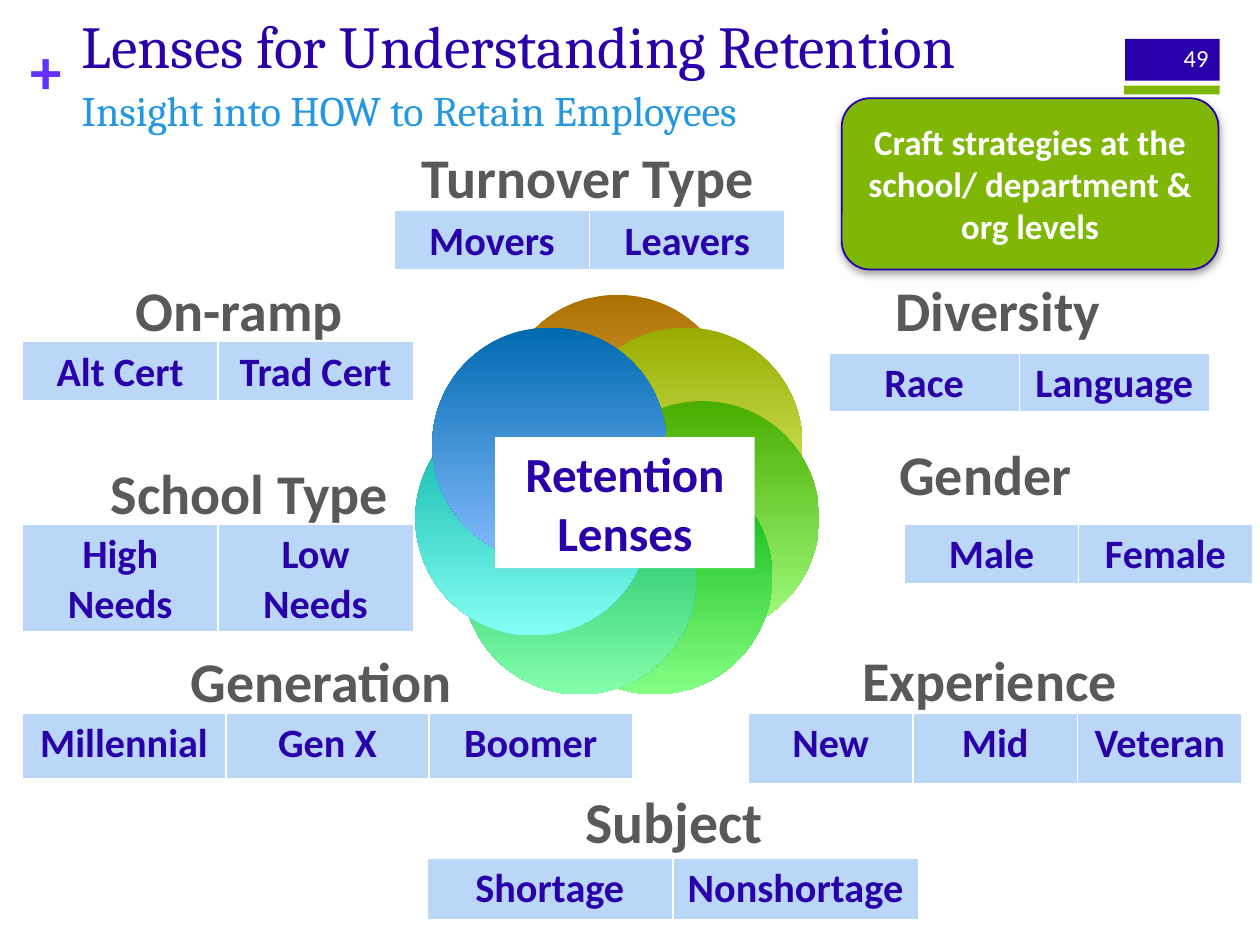
import math
from dataclasses import dataclass
from typing import Optional

import pptx
import pptx.dml.color
import pptx.enum.shapes
import pptx.enum.text
import pptx.oxml
import pptx.oxml.ns
import pptx.util
from lxml import etree

Inches = pptx.util.Inches
Pt = pptx.util.Pt
RGB = pptx.dml.color.RGBColor.from_string
SHAPE = pptx.enum.shapes.MSO_SHAPE
ALIGN = pptx.enum.text.PP_ALIGN
ANCHOR = pptx.enum.text.MSO_ANCHOR
qn = pptx.oxml.ns.qn


@dataclass(frozen=True)
class Theme:
    purple: str = "2900A9"
    violet: str = "6432FF"
    green: str = "80B606"
    sky: str = "2397E2"
    grey: str = "595959"
    pale_blue: str = "BBD7F8"
    white: str = "FFFFFF"
    outline: str = "2800A5"
    shadow: str = "808080"
    heading: str = "Cambria"
    body: str = "Calibri"
    title_size: int = 34
    subtitle_size: int = 24
    plus_size: int = 36
    label_size: int = 32
    subject_size: int = 33
    cell_size: int = 23
    center_size: int = 28
    callout_size: int = 20
    number_size: int = 14


THEME = Theme()


@dataclass(frozen=True)
class Box:
    x: float
    y: float
    w: float
    h: float

    def lengths(self) -> list:
        return [Inches(v) for v in (self.x, self.y, self.w, self.h)]


@dataclass(frozen=True)
class TextStyle:
    size: int
    color: str
    bold: bool = True
    font: str = THEME.body
    align: ALIGN = ALIGN.CENTER
    anchor: ANCHOR = ANCHOR.MIDDLE
    inset: bool = True
    wrap: bool = True
    spacing: Optional[float] = None


@dataclass(frozen=True)
class Lens:
    name: str
    label: Box
    choices: tuple
    table: Box


LABEL = TextStyle(THEME.label_size, THEME.grey, inset=False, spacing=0.9)
SUBJECT = TextStyle(THEME.subject_size, THEME.grey, align=ALIGN.LEFT,
                    anchor=ANCHOR.TOP, wrap=False)
CELL = TextStyle(THEME.cell_size, THEME.purple)

LENSES = [
    Lens("Turnover Type", Box(3.1, 0.9, 3.13, 1.06),
         ("Movers", "Leavers"), Box(3.13, 1.67, 3.1, 0.48)),
    Lens("Diversity", Box(6.91, 1.86, 2.02, 1.26),
         ("Race", "Language"), Box(6.58, 2.8, 3.02, 0.48)),
    Lens("Gender", Box(6.83, 3.12, 1.98, 1.34),
         ("Male", "Female"), Box(7.18, 4.16, 2.76, 0.48)),
    Lens("Experience", Box(6.79, 4.81, 2.13, 1.23),
         ("New", "Mid", "Veteran"), Box(5.94, 5.66, 3.92, 0.57)),
    Lens("Generation", Box(1.13, 4.82, 2.84, 1.23),
         ("Millennial", "Gen X", "Boomer"), Box(0.18, 5.66, 4.84, 0.53)),
    Lens("School Type", Box(0.55, 3.27, 2.86, 1.34),
         ("High Needs", "Low Needs"), Box(0.18, 4.16, 3.1, 0.87)),
    Lens("On-ramp", Box(0.89, 1.86, 2.02, 1.26),
         ("Alt Cert", "Trad Cert"), Box(0.18, 2.71, 3.1, 0.48)),
    Lens("Subject", Box(4.55, 6.19, 1.69, 0.66),
         ("Shortage", "Nonshortage"), Box(3.39, 6.81, 3.9, 0.5)),
]
PETALS = [("AB7100", "FFC384"), ("98AC00", "E9FF84"), ("4AAD00", "A4FF84"),
          ("00AD05", "85FF85"), ("00AE54", "85FFAB"), ("00AFA4", "85FFF3"),
          ("006AAF", "85BCFF")]


def write(tf, text: str, style: TextStyle) -> None:
    p = tf.paragraphs[0]
    p.alignment = style.align
    if style.spacing:
        p.line_spacing = style.spacing
    r = p.add_run()
    r.text = text
    for name, value in {"name": style.font, "size": Pt(style.size),
                        "bold": style.bold}.items():
        setattr(r.font, name, value)
    r.font.color.rgb = RGB(style.color)


def write_in_shape(sp, text: str, style: TextStyle) -> None:
    tf = sp.text_frame
    across, down = (0.1, 0.05) if style.inset else (0, 0)
    for name, value in {"word_wrap": style.wrap, "vertical_anchor": style.anchor,
                        "margin_left": Inches(across), "margin_right": Inches(across),
                        "margin_top": Inches(down), "margin_bottom": Inches(down)}.items():
        setattr(tf, name, value)
    write(tf, text, style)


def add_text(s, box: Box, text: str, style: TextStyle) -> None:
    write_in_shape(s.shapes.add_textbox(*box.lengths()), text, style)


def add_block(s, box: Box, fill: str, kind=SHAPE.RECTANGLE):
    sp = s.shapes.add_shape(kind, *box.lengths())
    sp.shadow.inherit = False
    sp.fill.solid()
    sp.fill.fore_color.rgb = RGB(fill)
    sp.line.fill.background()
    return sp


def add_petals(s, cx: float, cy: float, radius: float, diameter: float) -> None:
    """Overlapping gradient circles, spread evenly clockwise from the top."""
    for i, colors in enumerate(PETALS):
        angle = 2 * math.pi * i / len(PETALS)
        x = cx + radius * math.sin(angle) - diameter / 2
        y = cy - radius * math.cos(angle) - diameter / 2
        sp = add_block(s, Box(x, y, diameter, diameter), colors[0], SHAPE.OVAL)
        sp.fill.gradient()
        sp.fill.gradient_angle = 270
        for stop, color in zip(sp.fill.gradient_stops, colors):
            stop.color.rgb = RGB(color)


def set_borders(cell) -> None:
    tc_pr = cell._tc.get_or_add_tcPr()
    for i, (side, width) in enumerate((("L", 1), ("R", 1), ("T", 1), ("B", 3))):
        ln = etree.Element(qn(f"a:ln{side}"), w=str(Pt(width)))
        fill = etree.SubElement(ln, qn("a:solidFill"))
        etree.SubElement(fill, qn("a:srgbClr"), val=THEME.white)
        tc_pr.insert(i, ln)


def add_choices(s, box: Box, choices: tuple) -> None:
    table = s.shapes.add_table(1, len(choices), *box.lengths()).table
    table.first_row = table.horz_banding = False
    for i, choice in enumerate(choices):
        table.columns[i].width = Inches(box.w / len(choices))
        cell = table.cell(0, i)
        cell.fill.solid()
        cell.fill.fore_color.rgb = RGB(THEME.pale_blue)
        set_borders(cell)
        write(cell.text_frame, choice, CELL)


def add_callout(s, box: Box, text: str) -> None:
    sp = add_block(s, box, THEME.green, SHAPE.ROUNDED_RECTANGLE)
    sp.line.color.rgb = RGB(THEME.outline)
    sp.line.width = Pt(1)
    effects = sp._element.spPr.find(qn("a:effectLst"))
    shadow = etree.SubElement(effects, qn("a:outerShdw"), blurRad=str(Pt(5)),
                              dist=str(Pt(2)), dir="5400000", rotWithShape="0")
    color = etree.SubElement(shadow, qn("a:srgbClr"), val=THEME.shadow)
    etree.SubElement(color, qn("a:alpha"), val="75000")
    write_in_shape(sp, text, TextStyle(THEME.callout_size, THEME.white))


def main() -> None:
    prs = pptx.Presentation()
    prs.slide_width, prs.slide_height = Inches(10), Inches(7.5)
    s = prs.slides.add_slide(prs.slide_layouts[6])

    add_text(s, Box(0.24, 0.25, 0.29, 0.61), "+",
             TextStyle(THEME.plus_size, THEME.violet, align=ALIGN.LEFT,
                       anchor=ANCHOR.TOP, inset=False, wrap=False))
    add_block(s, Box(8.93, 0.31, 0.75, 0.33), THEME.purple)
    add_block(s, Box(8.92, 0.68, 0.76, 0.07), THEME.green)
    add_text(s, Box(0.55, -0.4, 8.97, 1.09), "Lenses for Understanding Retention",
             TextStyle(THEME.title_size, THEME.purple, False, THEME.heading,
                       ALIGN.LEFT, ANCHOR.BOTTOM))
    add_text(s, Box(0.55, 0.62, 8.27, 0.85), "Insight into HOW to Retain Employees",
             TextStyle(THEME.subtitle_size, THEME.sky, False, THEME.heading,
                       ALIGN.LEFT, ANCHOR.TOP))
    add_text(s, Box(9.08, 0.26, 0.61, 0.4), "49",
             TextStyle(THEME.number_size, THEME.white, False, align=ALIGN.RIGHT))

    add_petals(s, cx=4.9, cy=3.96, radius=0.69, diameter=1.86)
    center = add_block(s, Box(3.93, 3.47, 2.06, 1.04), THEME.white)
    write_in_shape(center, "Retention Lenses",
                   TextStyle(THEME.center_size, THEME.purple, anchor=ANCHOR.TOP))
    for lens in LENSES:
        add_text(s, lens.label, lens.name, SUBJECT if lens.name == "Subject" else LABEL)
        add_choices(s, lens.table, lens.choices)
    add_callout(s, Box(6.68, 0.78, 2.99, 1.36),
                "Craft strategies at the school/ department & org levels")
    prs.save("out.pptx")


if __name__ == "__main__":
    main()
